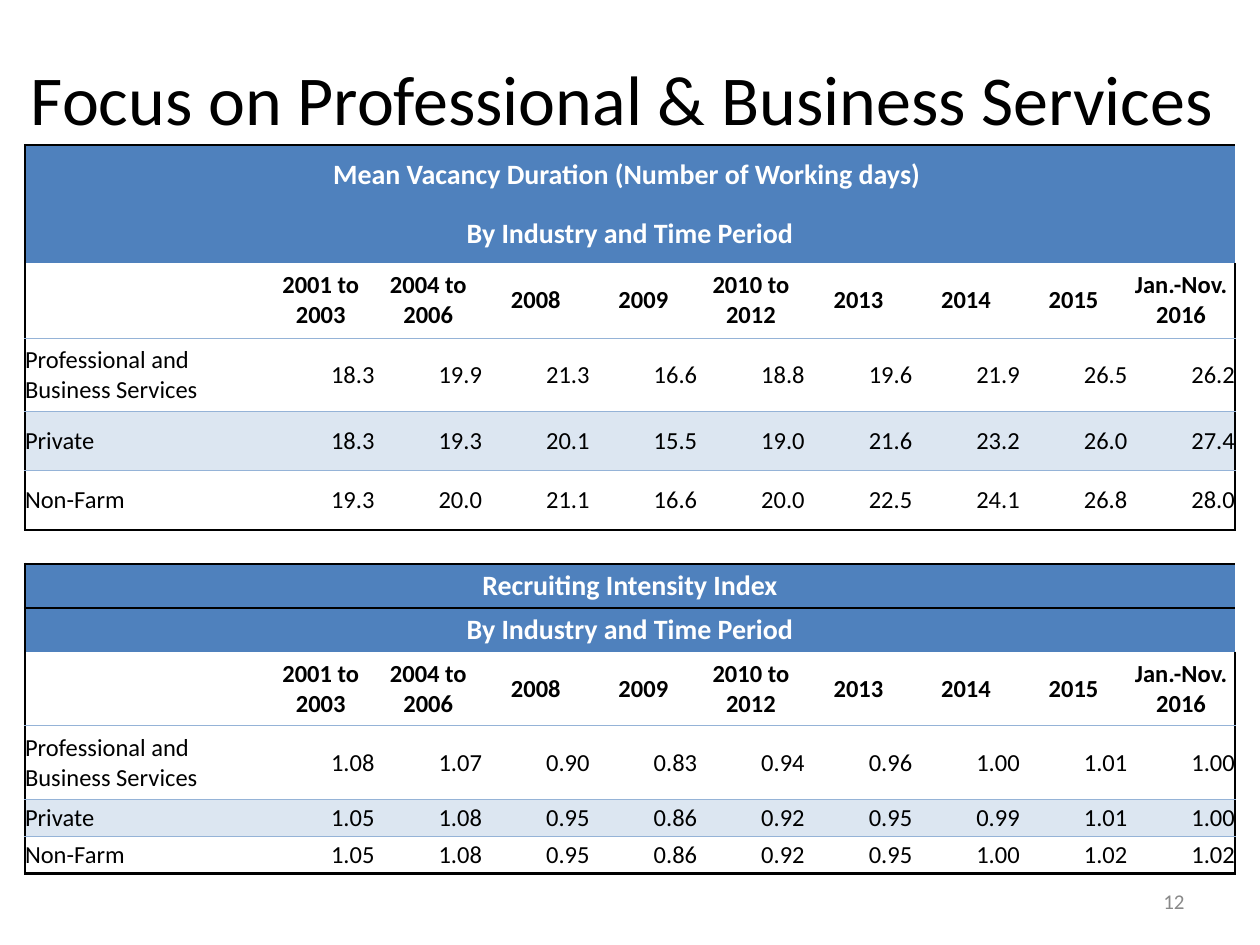
from dataclasses import dataclass
from typing import Any

from lxml import etree
from pptx import Presentation
from pptx.dml.color import RGBColor
from pptx.enum.text import MSO_ANCHOR, PP_ALIGN
from pptx.oxml.ns import qn
from pptx.util import Emu, Pt

LEFT, CENTER, RIGHT = PP_ALIGN.LEFT, PP_ALIGN.CENTER, PP_ALIGN.RIGHT
MIDDLE = MSO_ANCHOR.MIDDLE

BLACK = RGBColor(0x00, 0x00, 0x00)
WHITE = RGBColor(0xFF, 0xFF, 0xFF)
BLUE = RGBColor(0x4F, 0x81, 0xBD)
PALE = RGBColor(0xDC, 0xE6, 0xF1)
RULE = RGBColor(0x95, 0xB3, 0xD7)
GRAY = RGBColor(0x89, 0x89, 0x89)

TITLE_ONLY = 5
NO_STYLE = "{2D5ABB26-0587-4C30-8999-92F81FD0307C}"
FRAME_LINE = (BLACK, 1.5)
INNER_LINE = (RULE, 0.5)

PERIODS = ["2001 to 2003", "2004 to 2006", "2008", "2009", "2010 to 2012",
           "2013", "2014", "2015", "Jan.-Nov. 2016"]
INDUSTRIES = ["Professional and Business Services", "Private", "Non-Farm"]
SUBTITLE = "By Industry and Time Period"
DURATION = [
    "18.3 19.9 21.3 16.6 18.8 19.6 21.9 26.5 26.2",
    "18.3 19.3 20.1 15.5 19.0 21.6 23.2 26.0 27.4",
    "19.3 20.0 21.1 16.6 20.0 22.5 24.1 26.8 28.0",
]
INTENSITY = [
    "1.08 1.07 0.90 0.83 0.94 0.96 1.00 1.01 1.00",
    "1.05 1.08 0.95 0.86 0.92 0.95 0.99 1.01 1.00",
    "1.05 1.08 0.95 0.86 0.92 0.95 1.00 1.02 1.02",
]
BLOCK_ROWS = 6
LAST_COLUMN = len(PERIODS)


def px(length):
    return Emu(round(length * 914400 / 126))


@dataclass
class PageBuilder:
    page: Any
    font: str = "Calibri"

    def span(self, para, text, size, color, bold=False):
        span = para.add_run()
        span.text = text
        span.font.name = self.font
        span.font.size = Pt(size)
        span.font.bold = bold
        span.font.color.rgb = color

    def place(self, box, left, top, width, height):
        box.left, box.top = px(left), px(top)
        box.width, box.height = px(width), px(height)

    def fill_box(self, box, text, size, color, align):
        frame = box.text_frame
        frame.word_wrap = True
        frame.vertical_anchor = MIDDLE
        para = frame.paragraphs[0]
        para.alignment = align
        self.span(para, text, size, color)

    def title(self, text, *area):
        box = self.page.shapes.title
        self.place(box, *area)
        self.fill_box(box, text, 40, BLACK, CENTER)

    def text(self, text, size, color, align, *area):
        box = self.page.shapes.add_textbox(0, 0, 0, 0)
        self.place(box, *area)
        self.fill_box(box, text, size, color, align)

    def table(self, left, top, first_width, other_width, heights):
        columns = LAST_COLUMN + 1
        shape = self.page.shapes.add_table(
            len(heights), columns, px(left), px(top),
            px(first_width + other_width), px(sum(heights)))
        table = shape.table
        table.first_row = table.horz_banding = False
        table._tbl.tblPr.find(qn("a:tableStyleId")).text = NO_STYLE
        for index, column in enumerate(table.columns):
            column.width = px(other_width / LAST_COLUMN if index else first_width)
        for row, height in zip(table.rows, heights):
            row.height = px(height)
        return table

    def cell(self, cell, text, size, color, align, bold=False, fill=None, borders=None):
        cell.margin_left = cell.margin_right = 0
        cell.margin_top = cell.margin_bottom = 0
        cell.vertical_anchor = MIDDLE
        self.borders(cell, borders or {})
        if fill is None:
            cell.fill.background()
        else:
            cell.fill.solid()
            cell.fill.fore_color.rgb = fill
        para = cell.text_frame.paragraphs[0]
        para.alignment = align
        if text:
            self.span(para, text, size, color, bold)
        else:
            para._p.get_or_add_endParaRPr().set("sz", str(size * 100))

    def borders(self, cell, borders):
        properties = cell._tc.get_or_add_tcPr()
        for side in "LRTB":
            if side in borders:
                color, width = borders[side]
                line = etree.SubElement(properties, qn(f"a:ln{side}"), w=str(Pt(width)))
                solid = etree.SubElement(line, qn("a:solidFill"))
                etree.SubElement(solid, qn("a:srgbClr"), val=str(color))

    def block(self, table, start, heading, values):
        """Two heading rows, a row of periods and one row per industry."""
        rows = [[heading] + [""] * LAST_COLUMN,
                [SUBTITLE] + [""] * LAST_COLUMN,
                [""] + PERIODS]
        rows += [[name] + line.split() for name, line in zip(INDUSTRIES, values)]
        for offset, texts in enumerate(rows):
            row = start + offset
            if offset < 2:
                style = dict(size=16, color=WHITE, align=CENTER, bold=True, fill=BLUE)
                table.cell(row, 0).merge(table.cell(row, LAST_COLUMN))
            elif offset == 2:
                style = dict(size=14, color=BLACK, align=CENTER, bold=True)
            else:
                style = dict(size=14, color=BLACK, align=RIGHT,
                             fill=PALE if offset == 4 else None)
            for column, text in enumerate(texts):
                if offset > 2 and column == 0:
                    cell_style = {**style, "align": LEFT}
                else:
                    cell_style = style
                self.cell(table.cell(row, column), text, **cell_style,
                          borders=self.block_borders(offset, column))

    def block_borders(self, offset, column):
        borders = {}
        if column == 0:
            borders["L"] = FRAME_LINE
        if column == LAST_COLUMN:
            borders["R"] = FRAME_LINE
        if offset == 0:
            borders["T"] = FRAME_LINE
        if offset > 2:
            borders["T"] = INNER_LINE
        if offset >= 2:
            borders["B"] = FRAME_LINE if offset == BLOCK_ROWS - 1 else INNER_LINE
        return borders


def main():
    deck = Presentation()
    deck.slide_width, deck.slide_height = px(1260), px(945)
    builder = PageBuilder(deck.slides.add_slide(deck.slide_layouts[TITLE_ONLY]))

    # Title
    builder.title("Focus on Professional & Business Services ", 0, 50, 1260, 95)

    # One table holding two blocks with a spacer row between them
    heights = [59, 59, 75, 74, 59, 59, 34, 44, 44, 74, 74, 37, 37]
    table = builder.table(25, 145, 242, 968, heights)
    builder.block(table, 0, "Mean Vacancy Duration (Number of Working days) ", DURATION)
    for column in range(LAST_COLUMN + 1):
        builder.cell(table.cell(BLOCK_ROWS, column), "", 10, BLACK, LEFT,
                     borders={"T": FRAME_LINE, "B": FRAME_LINE})
    builder.block(table, BLOCK_ROWS + 1, "Recruiting Intensity Index", INTENSITY)

    # Page number
    builder.text("12", 12, GRAY, RIGHT, 903, 876, 294, 50)
    deck.save("out.pptx")


if __name__ == "__main__":
    main()
